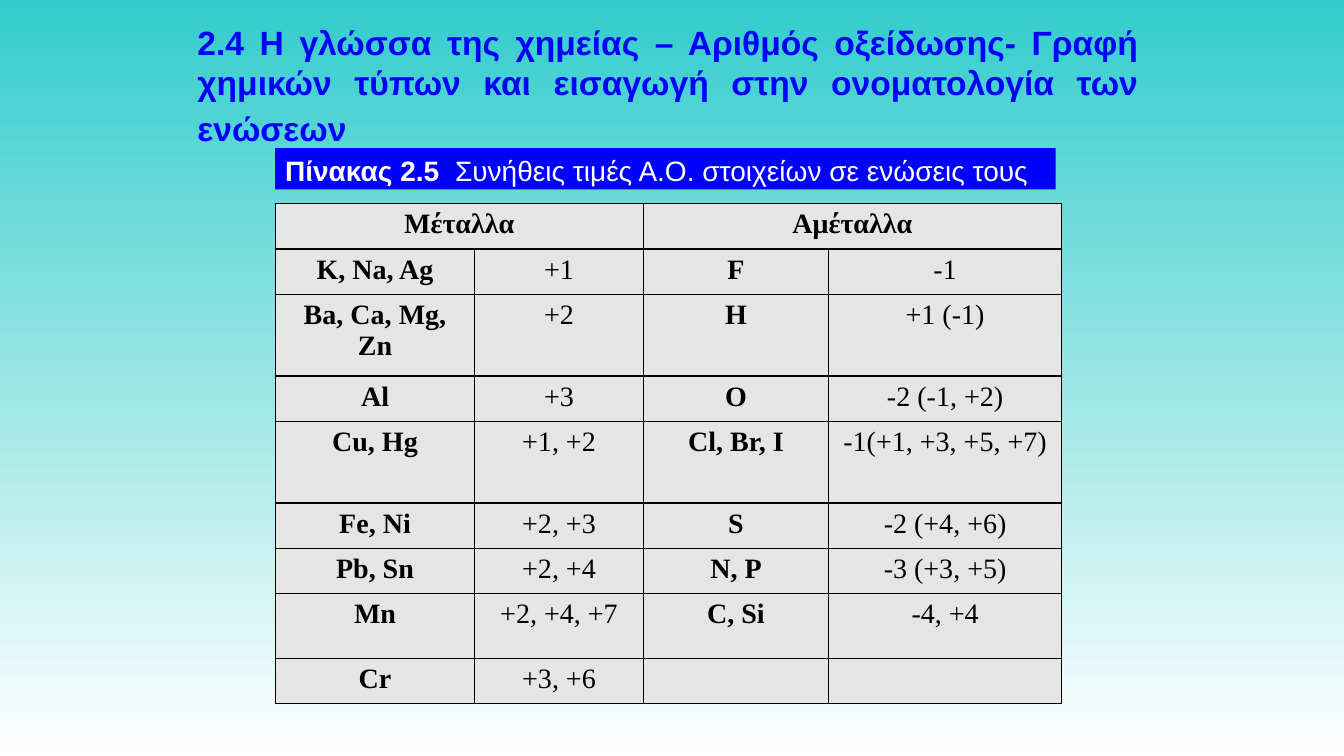
import dataclasses
import typing

import lxml.etree
import pptx
import pptx.dml.color
import pptx.enum.shapes
import pptx.enum.text
import pptx.oxml.ns
import pptx.util

Inches = pptx.util.Inches
ALIGN = pptx.enum.text.PP_ALIGN
ANCHOR = pptx.enum.text.MSO_ANCHOR

BLUE, BLACK, WHITE, GREY, TEAL = "0000FF", "000000", "FFFFFF", "E5E5E5", "33CCCC"
COLUMN_WIDTHS = [1.98, 1.67, 1.84, 2.31]
ROW_HEIGHTS = [0.45, 0.45, 0.81, 0.45, 0.81, 0.45, 0.45, 0.64, 0.45]


@dataclasses.dataclass
class Run:
    text: str
    size: float
    font: str
    color: str
    bold: bool = False


@dataclasses.dataclass
class OxidationRow:
    metal: str
    metal_states: str
    nonmetal: str = ""
    nonmetal_states: str = ""


OXIDATION_ROWS = [
    OxidationRow("K, Na, Ag", "+1", "F", "-1"),
    OxidationRow("Ba, Ca, Mg, Zn", "+2", "H", "+1 (-1)"),
    OxidationRow("Al", "+3", "O", "-2 (-1, +2)"),
    OxidationRow("Cu, Hg", "+1, +2", "Cl, Br, I", "-1(+1, +3, +5, +7)"),
    OxidationRow("Fe, Ni", "+2, +3", "S", "-2 (+4, +6)"),
    OxidationRow("Pb, Sn", "+2, +4", "N, P", "-3 (+3, +5)"),
    OxidationRow("Mn", "+2, +4, +7", "C, Si", "-4, +4"),
    OxidationRow("Cr", "+3, +6"),
]


def rgb(value: str) -> pptx.dml.color.RGBColor:
    return pptx.dml.color.RGBColor.from_string(value)


def write(tf: typing.Any, runs: list[Run], align: ALIGN) -> None:
    p = tf.paragraphs[0]
    p.alignment = align
    for run in runs:
        r = p.add_run()
        r.text = run.text
        formats = {"size": pptx.util.Pt(run.size), "name": run.font, "bold": run.bold}
        for key, value in formats.items():
            setattr(r.font, key, value)
        r.font.color.rgb = rgb(run.color)


def fill_background(s: typing.Any) -> None:
    fill = s.background.fill
    fill.gradient()
    fill.gradient_angle = 270
    for stop, color, position in zip(fill.gradient_stops, (TEAL, WHITE), (0, 1)):
        stop.color.rgb = rgb(color)
        stop.position = position


def add_borders(cell: typing.Any) -> None:
    qn = pptx.oxml.ns.qn
    tcPr = cell._tc.get_or_add_tcPr()
    for side in ("a:lnL", "a:lnR", "a:lnT", "a:lnB"):
        ln = lxml.etree.SubElement(tcPr, qn(side), w=str(pptx.util.Pt(1)))
        solid = lxml.etree.SubElement(ln, qn("a:solidFill"))
        lxml.etree.SubElement(solid, qn("a:srgbClr"), val=BLACK)


def add_oxidation_table(s: typing.Any) -> None:
    frame = s.shapes.add_table(
        len(ROW_HEIGHTS), len(COLUMN_WIDTHS),
        Inches(2.73), Inches(2.02), Inches(sum(COLUMN_WIDTHS)), Inches(sum(ROW_HEIGHTS)),
    )
    table = frame.table
    for column, width in zip(table.columns, COLUMN_WIDTHS):
        column.width = Inches(width)
    for row, height in zip(table.rows, ROW_HEIGHTS):
        row.height = Inches(height)
    for left in (0, 2):
        table.cell(0, left).merge(table.cell(0, left + 1))

    contents = [("Μέταλλα", "", "Αμέταλλα", "")]
    contents += [dataclasses.astuple(row) for row in OXIDATION_ROWS]
    for row, texts in zip(table.rows, contents):
        for i, (cell, text) in enumerate(zip(row.cells, texts)):
            add_borders(cell)
            cell.fill.solid()
            cell.fill.fore_color.rgb = rgb(GREY)
            if text:
                run = Run(text, 20, "Times New Roman", BLACK, i % 2 == 0)
                write(cell.text_frame, [run], ALIGN.CENTER)


def add_caption(s: typing.Any) -> None:
    sp = s.shapes.add_shape(
        pptx.enum.shapes.MSO_SHAPE.RECTANGLE,
        Inches(2.73), Inches(1.47), Inches(7.74), Inches(0.41),
    )
    sp.shadow.inherit = False
    sp.fill.solid()
    sp.fill.fore_color.rgb = rgb(BLUE)
    sp.line.fill.background()
    tf = sp.text_frame
    for key, value in {"word_wrap": True, "vertical_anchor": ANCHOR.TOP}.items():
        setattr(tf, key, value)
    write(tf, [
        Run("Πίνακας 2.5  ", 20, "Arial", WHITE, True),
        Run("Συνήθεις τιμές Α.Ο. στοιχείων σε ενώσεις τους", 20, "Arial", WHITE),
    ], ALIGN.LEFT)


def add_title(s: typing.Any) -> None:
    sp = s.shapes.add_textbox(Inches(1.86), Inches(0.16), Inches(9.53), Inches(1.38))
    tf = sp.text_frame
    formats = {
        "word_wrap": True,
        "vertical_anchor": ANCHOR.MIDDLE,
        "auto_size": pptx.enum.text.MSO_AUTO_SIZE.SHAPE_TO_FIT_TEXT,
    }
    for key, value in formats.items():
        setattr(tf, key, value)
    title = (
        "2.4 Η γλώσσα της χημείας – Αριθμός οξείδωσης- Γραφή χημικών τύπων "
        "και εισαγωγή στην ονοματολογία των ενώσεων"
    )
    write(tf, [
        Run(title, 24, "Arial", BLUE, True),
        Run(" ", 28, "Arial", BLACK),
    ], ALIGN.JUSTIFY)


def main() -> None:
    prs = pptx.Presentation()
    prs.slide_width, prs.slide_height = Inches(13.33), Inches(7.5)
    s = prs.slides.add_slide(prs.slide_layouts[6])
    fill_background(s)
    add_oxidation_table(s)
    add_caption(s)
    add_title(s)
    prs.save("out.pptx")


if __name__ == "__main__":
    main()
